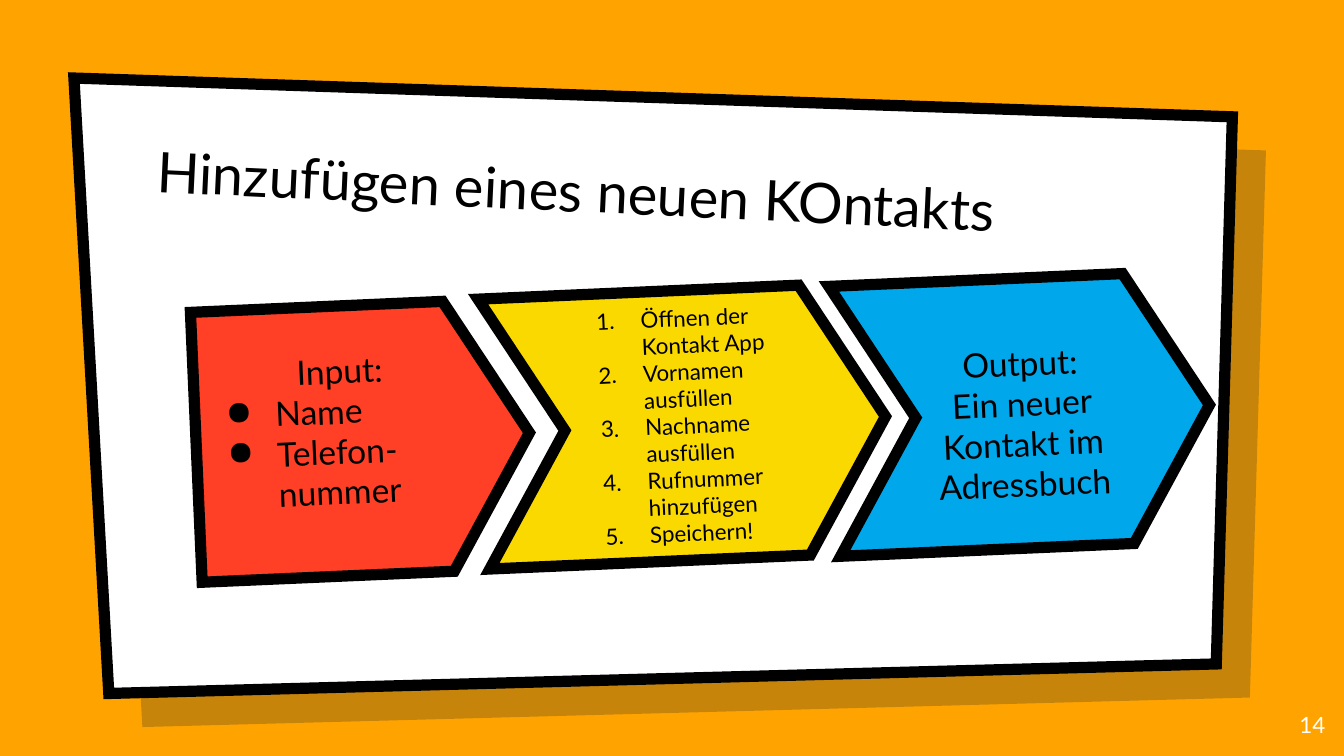
from lxml.etree import SubElement
from pptx import Presentation
from pptx.dml.color import RGBColor
from pptx.enum.shapes import MSO_SHAPE
from pptx.enum.text import MSO_ANCHOR, PP_ALIGN
from pptx.oxml.ns import qn
from pptx.util import Pt

ORANGE = RGBColor(0xFF, 0xA3, 0x00)
NAVY = RGBColor(0x00, 0x19, 0x36)
RED = RGBColor(0xFF, 0x40, 0x26)
YELLOW = RGBColor(0xFA, 0xD9, 0x00)
BLUE = RGBColor(0x00, 0xA7, 0xEB)
BLACK = RGBColor(0, 0, 0)
WHITE = RGBColor(0xFF, 0xFF, 0xFF)

PANEL = [(39.6, 41.8), (660.2, 62.6), (651.6, 355.7), (58.3, 371.5)]
SHIFT = 18
TILT = -2.5


def write(frame, text, size=18, color=BLACK, align=PP_ALIGN.LEFT, space=None,
          mark=None, hang=0):
    """Add one paragraph to a text frame, with a bullet or number if asked."""
    para = frame.paragraphs[0]
    if para.runs:
        para = frame.add_paragraph()
    if mark:
        props = para._p.get_or_add_pPr()
        props.set("marL", str(Pt(36)))
        props.set("indent", str(-Pt(hang)))
        tint = SubElement(props, qn("a:buClr"))
        SubElement(tint, qn("a:srgbClr"), val=str(color))
        if mark == "1.":
            SubElement(props, qn("a:buAutoNum"), type="arabicPeriod")
        else:
            SubElement(props, qn("a:buChar"), char=mark)
    para.alignment = align
    if space:
        para.line_spacing = space
    run = para.add_run()
    run.text = text
    run.font.name = "Lato"
    run.font.size = Pt(size)
    run.font.color.rgb = color


class Deck:
    """Hold the style and the current slide."""

    def __init__(self):
        self.show = Presentation()
        self.show.slide_width, self.show.slide_height = Pt(720), Pt(405)
        self.slide = self.show.slides.add_slide(self.show.slide_layouts[6])
        self.slide.background.fill.solid()
        self.slide.background.fill.fore_color.rgb = ORANGE

    def paint(self, shape, fill, alpha=None, edge=True):
        """Give a shape its fill and its thick sharp edge."""
        shape.shadow.inherit = False
        shape.fill.solid()
        shape.fill.fore_color.rgb = fill
        if alpha:
            tint = shape.fill._xPr.find(qn("a:solidFill"))[0]
            SubElement(tint, qn("a:alpha"), val=str(alpha * 1000))
        if edge:
            shape.line.color.rgb = BLACK
            shape.line.width = Pt(6)
            line = shape.line._get_or_add_ln()
            SubElement(line, qn("a:miter"), lim="800000")
        else:
            shape.line.fill.background()

    def frame(self, shape, anchor, foot=7.2):
        """Set up the text frame of a shape."""
        frame = shape.text_frame
        frame.word_wrap = True
        frame.vertical_anchor = anchor
        frame.margin_left = frame.margin_right = frame.margin_top = Pt(7.2)
        frame.margin_bottom = Pt(foot)
        return frame

    def panel(self, shift, fill, **style):
        """Draw the slanted panel, moved by a shift."""
        spots = [(Pt(x + shift), Pt(y + shift)) for x, y in PANEL]
        pen = self.slide.shapes.build_freeform(*spots[0], scale=1.0)
        pen.add_line_segments(spots[1:], close=True)
        self.paint(pen.convert_to_shape(), fill, **style)

    def text(self, text, box, turn=0, anchor=MSO_ANCHOR.TOP, **style):
        """Place a text box."""
        shape = self.slide.shapes.add_textbox(*map(Pt, box))
        shape.rotation = turn
        write(self.frame(shape, anchor), text, **style)

    def step(self, kind, left, top, width, fill, foot=7.2):
        """Place one arrow of the process and return its text frame."""
        shape = self.slide.shapes.add_shape(
            kind, Pt(left), Pt(top), Pt(width), Pt(144.7))
        shape.adjustments[0] = 0.3
        shape.rotation = TILT
        self.paint(shape, fill)
        return self.frame(shape, MSO_ANCHOR.MIDDLE, foot)


def main():
    """Build the slide."""
    deck = Deck()
    deck.panel(SHIFT, NAVY, alpha=22, edge=False)
    deck.panel(0, WHITE)
    deck.text("Hinzufügen eines neuen KOntakts", (77, 69.1, 553.7, 59.8),
              turn=2.7, anchor=MSO_ANCHOR.BOTTOM, size=30)

    start = deck.step(MSO_SHAPE.PENTAGON, 105.1, 163.4, 178.6, RED, foot=28.8)
    write(start, "Input:", align=PP_ALIGN.CENTER, space=1.5)
    for item in ("Name", "Telefon-nummer"):
        write(start, item, mark="●", hang=26.6)

    work = deck.step(MSO_SHAPE.CHEVRON, 259.2, 155.5, 215.3, YELLOW)
    for item in ("Öffnen der Kontakt App", "Vornamen ausfüllen",
                 "Nachname ausfüllen", "Rufnummer hinzufügen", "Speichern!"):
        write(work, item, size=12, mark="1.", hang=23.8)

    end = deck.step(MSO_SHAPE.CHEVRON, 447.1, 149, 200.9, BLUE)
    write(end, "Output:", align=PP_ALIGN.CENTER, space=1.5)
    write(end, "Ein neuer Kontakt im Adressbuch", align=PP_ALIGN.CENTER)

    deck.text("14", (673.9, 373.7, 43.2, 31), size=12, color=WHITE,
              align=PP_ALIGN.RIGHT)
    deck.show.save("out.pptx")


if __name__ == "__main__":
    main()
